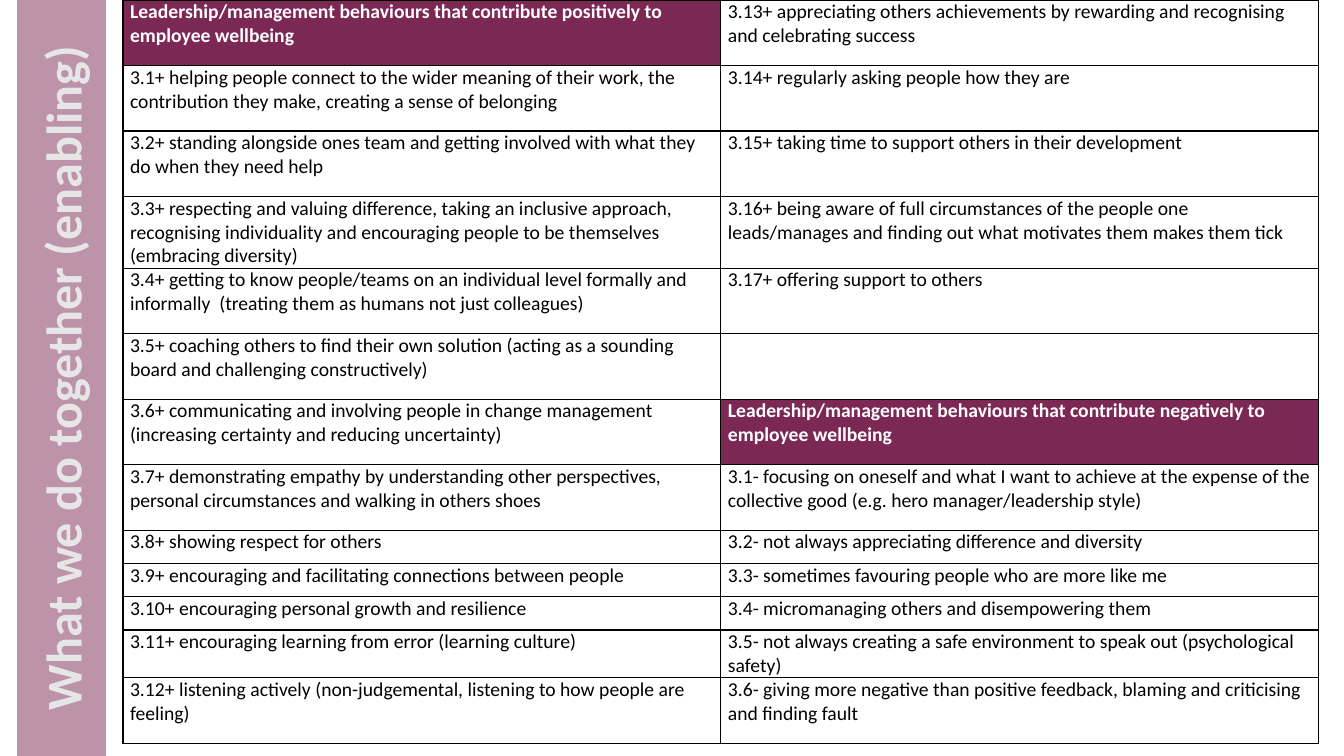
from lxml import etree
from pptx import Presentation
from pptx.dml.color import RGBColor
from pptx.enum.text import MSO_ANCHOR, MSO_AUTO_SIZE, PP_ALIGN
from pptx.oxml.ns import qn
from pptx.util import Inches, Pt

PLUM = RGBColor(0x7C, 0x28, 0x55)
PALE_GREY = RGBColor(0xE7, 0xE6, 0xE6)
WHITE = RGBColor(0xFF, 0xFF, 0xFF)
BLACK = RGBColor(0x00, 0x00, 0x00)
CENTER = PP_ALIGN.CENTER
MIDDLE = MSO_ANCHOR.MIDDLE
NO_AUTOFIT = MSO_AUTO_SIZE.NONE
TITLE_ONLY = 5
FONT = "Calibri"

BAND_TITLE = "What we do together (enabling)"
HEADING = "Leadership/management behaviours that contribute {} to employee wellbeing"
POSITIVE_HEADING = HEADING.format("positively")
NEGATIVE_HEADING = HEADING.format("negatively")
POSITIVE_BEHAVIOURS = [
    "helping people connect to the wider meaning of their work, the contribution they make, "
    "creating a sense of belonging",
    "standing alongside ones team and getting involved with what they do when they need help",
    "respecting and valuing difference, taking an inclusive approach, recognising individuality "
    "and encouraging people to be themselves (embracing diversity)",
    "getting to know people/teams on an individual level formally and informally  "
    "(treating them as humans not just colleagues)",
    "coaching others to find their own solution (acting as a sounding board and challenging "
    "constructively)",
    "communicating and involving people in change management (increasing certainty and reducing "
    "uncertainty)",
    "demonstrating empathy by understanding other perspectives, personal circumstances and "
    "walking in others shoes",
    "showing respect for others",
    "encouraging and facilitating connections between people",
    "encouraging personal growth and resilience",
    "encouraging learning from error (learning culture)",
    "listening actively (non-judgemental, listening to how people are feeling)",
    "appreciating others achievements by rewarding and recognising and celebrating success",
    "regularly asking people how they are",
    "taking time to support others in their development",
    "being aware of full circumstances of the people one leads/manages and finding out what "
    "motivates them makes them tick",
    "offering support to others",
]
NEGATIVE_BEHAVIOURS = [
    "focusing on oneself and what I want to achieve at the expense of the collective good "
    "(e.g. hero manager/leadership style)",
    "not always appreciating difference and diversity",
    "sometimes favouring people who are more like me",
    "micromanaging others and disempowering them",
    "not always creating a safe environment to speak out (psychological safety)",
    "giving more negative than positive feedback, blaming and criticising and finding fault",
]
ROW_HEIGHTS = [0.65] * 3 + [0.69] + [0.65] * 4 + [0.33] * 3 + [0.46, 0.65]


def numbered(behaviours, sign):
    """Prefix each behaviour with its number in section 3."""
    return [f"3.{number}{sign} {text}" for number, text in enumerate(behaviours, 1)]


def write_text(text_frame, text, size, color, bold=False, align=None):
    """Write one formatted paragraph into a text frame."""
    paragraph = text_frame.paragraphs[0]
    paragraph.alignment = align
    run = paragraph.add_run()
    run.text = text
    run.font.name = FONT
    run.font.size = Pt(size)
    run.font.bold = bold
    run.font.color.rgb = color


def add_borders(cell, color, width):
    """Draw a solid line on all four sides of a cell."""
    properties = cell._tc.get_or_add_tcPr()
    for index, side in enumerate(("a:lnL", "a:lnR", "a:lnT", "a:lnB")):
        line = etree.Element(qn(side), w=str(Pt(width)))
        fill = etree.SubElement(line, qn("a:solidFill"))
        etree.SubElement(fill, qn("a:srgbClr"), val=str(color))
        properties.insert(index, line)


def add_title_band(slide, left, top, width, height):
    """Turn the title into a translucent band that reads upwards in the given box."""
    title = slide.shapes.title
    title.left = Inches(left + (width - height) / 2)
    title.top = Inches(top + (height - width) / 2)
    title.width, title.height = Inches(height), Inches(width)
    title.rotation = 270
    title.fill.solid()
    title.fill.fore_color.rgb = PLUM
    color = title.fill._xPr.find(".//" + qn("a:srgbClr"))
    etree.SubElement(color, qn("a:alpha"), val="50000")
    text_frame = title.text_frame
    text_frame.auto_size = NO_AUTOFIT
    text_frame.word_wrap = True
    text_frame.vertical_anchor = MIDDLE
    write_text(text_frame, BAND_TITLE, 35.8, PALE_GREY, bold=True, align=CENTER)


def fill_cell(cell, text):
    """Fill one table cell, with plum behind the headings."""
    is_heading = text in (POSITIVE_HEADING, NEGATIVE_HEADING)
    if is_heading:
        cell.fill.solid()
        cell.fill.fore_color.rgb = PLUM
    else:
        cell.fill.background()
    add_borders(cell, BLACK, 1)
    cell.margin_left = cell.margin_right = Inches(0.07)
    cell.margin_top = cell.margin_bottom = 0
    if text:
        write_text(cell.text_frame, text, 14, WHITE if is_heading else BLACK, bold=is_heading)


def add_behaviour_table(slide, left, top, width):
    """Run the behaviours down two equal columns."""
    entries = [POSITIVE_HEADING, *numbered(POSITIVE_BEHAVIOURS, "+"), "",
               NEGATIVE_HEADING, *numbered(NEGATIVE_BEHAVIOURS, "-")]
    row_count = len(ROW_HEIGHTS)
    table = slide.shapes.add_table(row_count, 2, Inches(left), Inches(top),
                                   Inches(width), Inches(sum(ROW_HEIGHTS))).table
    table.first_row = table.horz_banding = False
    for row, height in zip(table.rows, ROW_HEIGHTS):
        row.height = Inches(height)
    for index, text in enumerate(entries):
        column, row = divmod(index, row_count)
        fill_cell(table.cell(row, column), text)


def main():
    """Build and save the slide."""
    presentation = Presentation()
    presentation.slide_width = Inches(13.33)
    presentation.slide_height = Inches(7.5)
    slide = presentation.slides.add_slide(presentation.slide_layouts[TITLE_ONLY])
    add_title_band(slide, 0.17, 0, 0.88, 7.5)
    add_behaviour_table(slide, 1.22, 0, 11.86)
    presentation.save("out.pptx")


if __name__ == "__main__":
    main()
